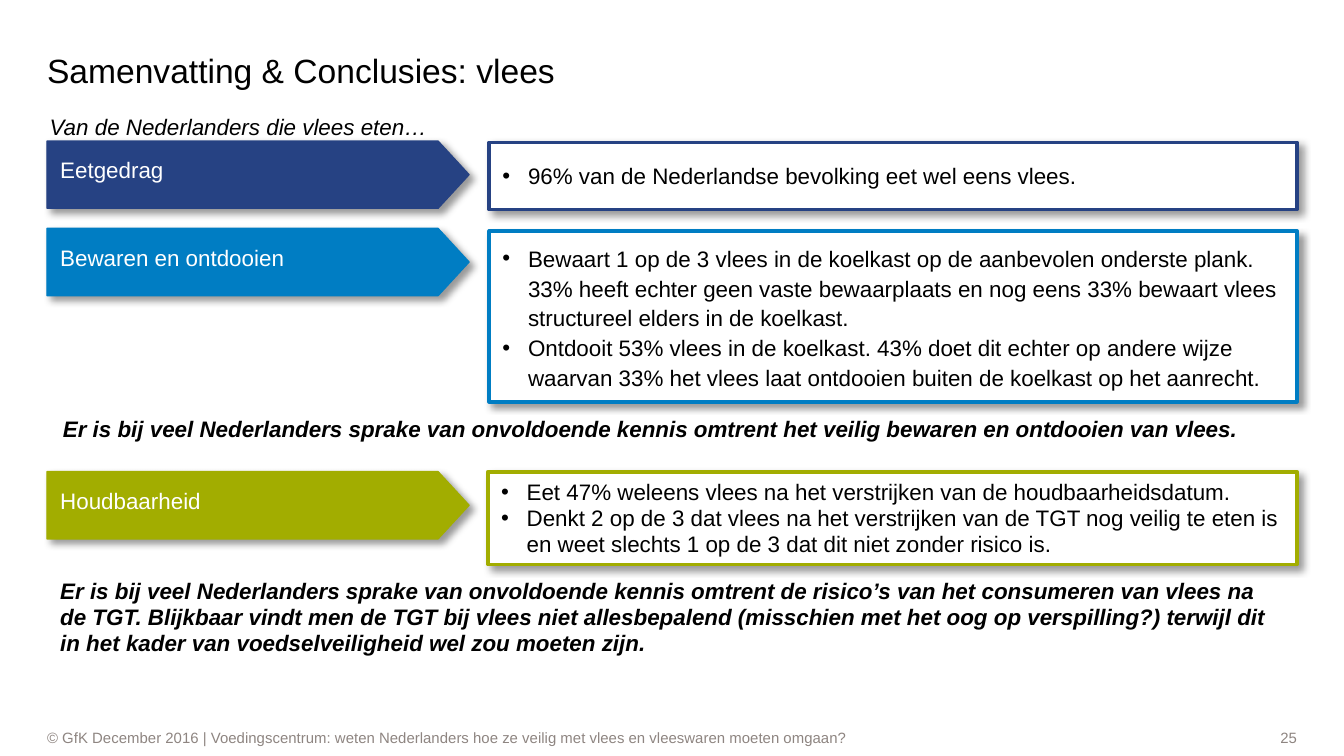
import pptx
import pptx.util
import pptx.dml.color
import pptx.enum.shapes
import pptx.enum.text
import pptx.oxml.ns
import lxml.etree

Inches = pptx.util.Inches
Pt = pptx.util.Pt
RGBColor = pptx.dml.color.RGBColor
Anchor = pptx.enum.text.MSO_ANCHOR
Align = pptx.enum.text.PP_ALIGN
qn = pptx.oxml.ns.qn

NAVY = RGBColor(0x26, 0x42, 0x83)
BLUE = RGBColor(0x00, 0x7D, 0xC3)
GREEN = RGBColor(0xA2, 0xAD, 0x00)
BLACK = RGBColor(0x00, 0x00, 0x00)
WHITE = RGBColor(0xFF, 0xFF, 0xFF)
GREY = RGBColor(0x8E, 0x85, 0x81)

FONT = "Arial"
LEFT = 0.35
ARROW_WIDTH, ARROW_HEIGHT, ARROW_TIP = 3.14, 0.5, 0.23
BULLET_INDENT = 0.19
DEFAULT_INSETS = (0.1, 0.05, 0.1, 0.05)
NO_INSETS = (0, 0, 0, 0)

# Label, colour, arrow top, box position and size, line spacing, bullets
TOPICS = [
    ("Eetgedrag", NAVY, 1.05, (3.64, 1.06, 6.01, 0.5), 14,
     ["96% van de Nederlandse bevolking eet wel eens vlees."]),
    ("Bewaren en ontdooien", BLUE, 1.7, (3.64, 1.72, 6.01, 1.27), 16,
     ["Bewaart 1 op de 3 vlees in de koelkast op de aanbevolen onderste plank. "
      "33% heeft echter geen vaste bewaarplaats en nog eens 33% bewaart vlees "
      "structureel elders in de koelkast.",
      "Ontdooit 53% vlees in de koelkast. 43% doet dit echter op andere wijze "
      "waarvan 33% het vlees laat ontdooien buiten de koelkast op het aanrecht."]),
    ("Houdbaarheid", GREEN, 3.51, (3.63, 3.51, 6.02, 0.69), 14,
     ["Eet 47% weleens vlees na het verstrijken van de houdbaarheidsdatum.",
      "Denkt 2 op de 3 dat vlees na het verstrijken van de TGT nog veilig te eten is "
      "en weet slechts 1 op de 3 dat dit niet zonder risico is."]),
]


def add_bullet(paragraph):
    """Give a paragraph a round bullet with a hanging indent."""
    properties = paragraph._p.get_or_add_pPr()
    properties.set("marL", str(Inches(BULLET_INDENT)))
    properties.set("indent", str(-Inches(BULLET_INDENT)))
    lxml.etree.SubElement(properties, qn("a:buFont"), typeface=FONT)
    lxml.etree.SubElement(properties, qn("a:buChar"), char="•")


def write_text(shape, texts, size=12, color=BLACK, bold=False, italic=False,
               align=Align.LEFT, anchor=Anchor.MIDDLE, insets=DEFAULT_INSETS,
               line_spacing=None, bullets=False):
    """Fill a shape with one paragraph per text."""
    frame = shape.text_frame
    frame.word_wrap = True
    frame.auto_size = pptx.enum.text.MSO_AUTO_SIZE.NONE
    frame.vertical_anchor = anchor
    (frame.margin_left, frame.margin_top,
     frame.margin_right, frame.margin_bottom) = map(Inches, insets)
    for index, text in enumerate(texts):
        paragraph = frame.add_paragraph() if index else frame.paragraphs[0]
        if bullets:
            add_bullet(paragraph)
        paragraph.alignment = align
        if line_spacing:
            paragraph.line_spacing = Pt(line_spacing)
        run = paragraph.add_run()
        run.text = text
        run.font.name = FONT
        run.font.size = Pt(size)
        run.font.color.rgb = color
        run.font.bold = bold
        run.font.italic = italic


def style_shape(shape, fill, line, line_width):
    """Set fill and outline, and a soft shadow to the lower right."""
    shape.fill.solid()
    shape.fill.fore_color.rgb = fill
    shape.line.color.rgb = line
    shape.line.width = Pt(line_width)
    shape.shadow.inherit = False
    effects = shape._element.spPr.find(qn("a:effectLst"))
    shadow = lxml.etree.SubElement(
        effects, qn("a:outerShdw"), blurRad=str(Pt(4)), dist=str(Pt(3)),
        dir=str(45 * 60000), algn="tl", rotWithShape="0")
    color = lxml.etree.SubElement(shadow, qn("a:srgbClr"), val=str(BLACK))
    lxml.etree.SubElement(color, qn("a:alpha"), val="40000")


def add_arrow(slide, label, color, top):
    right = LEFT + ARROW_WIDTH
    shoulder = right - ARROW_TIP
    bottom = top + ARROW_HEIGHT
    outline = [(shoulder, top), (right, top + ARROW_HEIGHT / 2),
               (shoulder, bottom), (LEFT, bottom)]
    builder = slide.shapes.build_freeform(Inches(LEFT), Inches(top))
    builder.add_line_segments([(Inches(x), Inches(y)) for x, y in outline])
    arrow = builder.convert_to_shape()
    style_shape(arrow, color, color, 0.75)
    write_text(arrow, [label], color=WHITE, insets=(0.1, 0.05, 0.1, 0.12))


def add_bullet_box(slide, position, color, line_spacing, bullets):
    box = slide.shapes.add_shape(
        pptx.enum.shapes.MSO_SHAPE.RECTANGLE, *map(Inches, position))
    style_shape(box, WHITE, color, 2)
    write_text(box, bullets, line_spacing=line_spacing, bullets=True)


def add_text(slide, position, text, **text_format):
    box = slide.shapes.add_textbox(*map(Inches, position))
    write_text(box, [text], **text_format)


def set_title(slide, text):
    title = slide.shapes.title
    title.left, title.top = Inches(LEFT), Inches(0.21)
    title.width, title.height = Inches(7.01), Inches(0.63)
    write_text(title, [text], size=18, insets=NO_INSETS)


def main():
    presentation = pptx.Presentation()
    # Widescreen, 16:9
    presentation.slide_width = Inches(10)
    presentation.slide_height = Inches(10) * 9 // 16
    slide = presentation.slides.add_slide(presentation.slide_layouts[5])

    # Title and introduction
    set_title(slide, "Samenvatting & Conclusies: vlees")
    add_text(slide, (0.37, 0.84, 3.7, 0.2), "Van de Nederlanders die vlees eten…",
             italic=True, anchor=Anchor.TOP, insets=NO_INSETS)

    # Topics: arrow on the left, findings on the right
    for label, color, top, position, line_spacing, bullets in TOPICS:
        add_bullet_box(slide, position, color, line_spacing, bullets)
        add_arrow(slide, label, color, top)

    # Conclusions
    conclusion = {"bold": True, "italic": True, "anchor": Anchor.TOP}
    add_text(slide, (0.37, 3.02, 9.27, 0.31),
             "Er is bij veel Nederlanders sprake van onvoldoende kennis omtrent "
             "het veilig bewaren en ontdooien van vlees.",
             line_spacing=16, **conclusion)
    add_text(slide, (LEFT, 4.25, 9.27, 0.69),
             "Er is bij veel Nederlanders sprake van onvoldoende kennis omtrent "
             "de risico’s van het consumeren van vlees na de TGT. Blijkbaar vindt "
             "men de TGT bij vlees niet allesbepalend (misschien met het oog op "
             "verspilling?) terwijl dit in het kader van voedselveiligheid wel "
             "zou moeten zijn.",
             line_spacing=14, **conclusion)

    # Footer and page number
    footer = {"size": 8, "color": GREY, "insets": NO_INSETS}
    add_text(slide, (LEFT, 5.41, 7.72, 0.16),
             "© GfK December 2016 | Voedingscentrum: weten Nederlanders hoe ze "
             "veilig met vlees en vleeswaren moeten omgaan?", **footer)
    add_text(slide, (8.23, 5.41, 1.42, 0.16), "25", align=Align.RIGHT, **footer)

    presentation.save("out.pptx")


if __name__ == "__main__":
    main()
